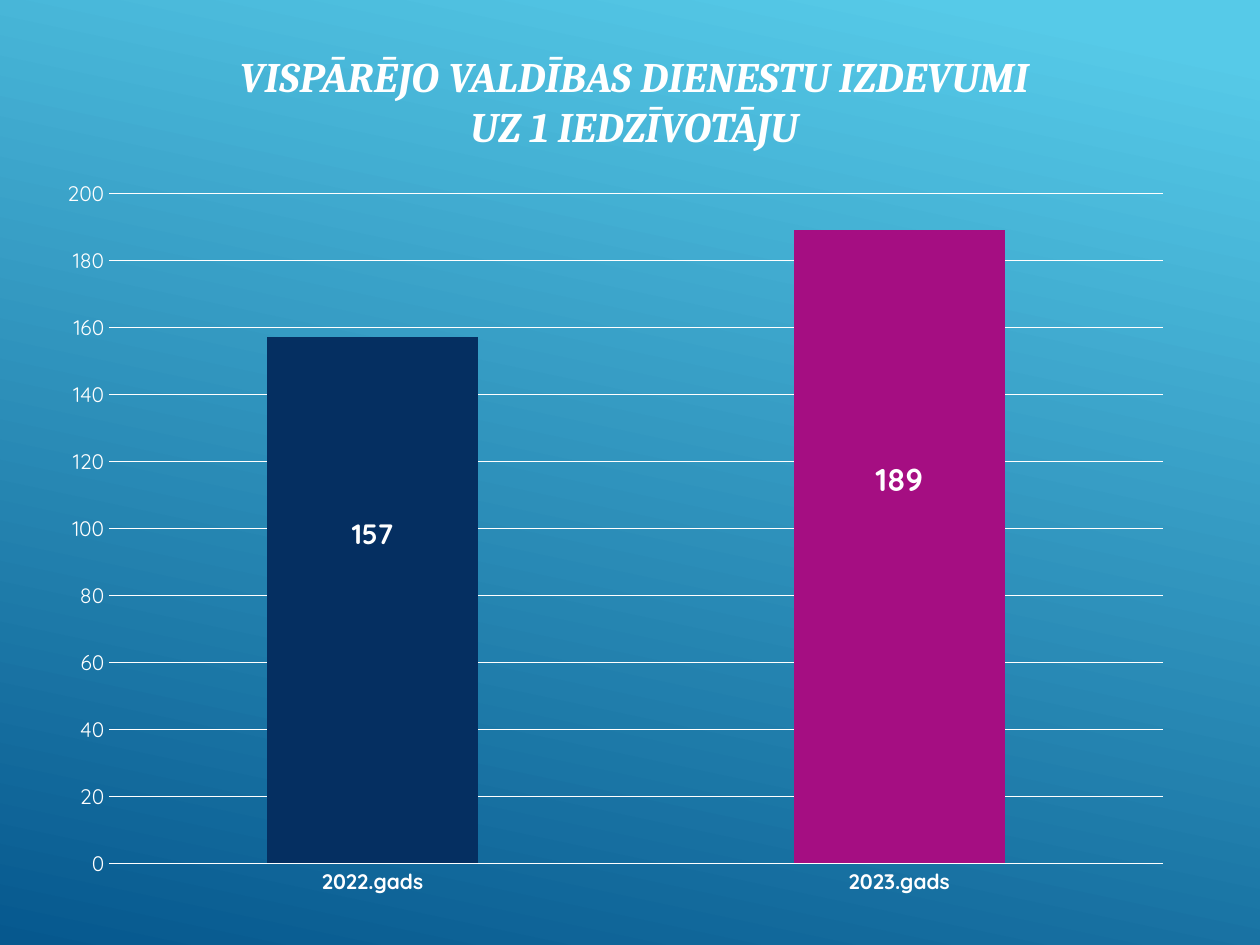
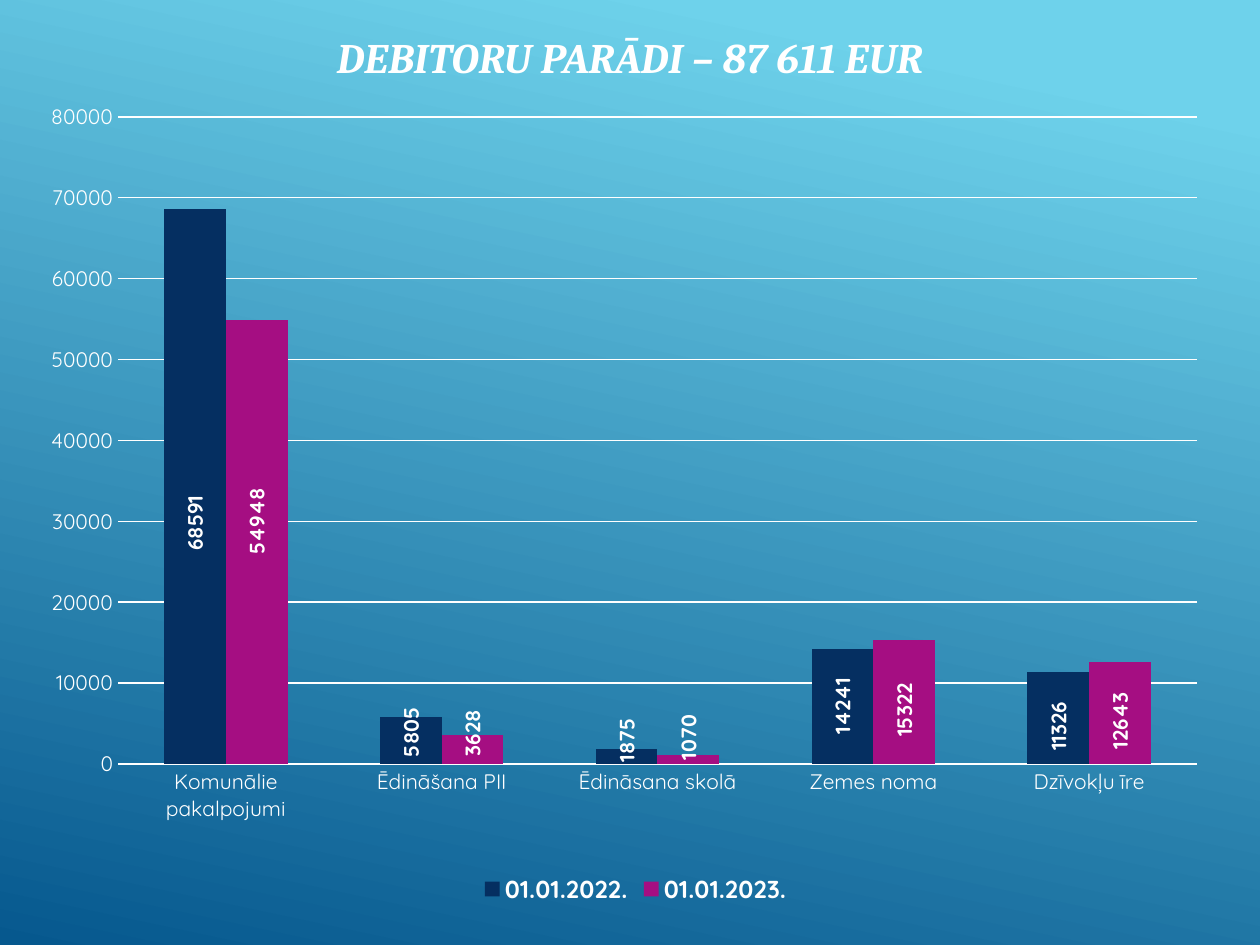
from pptx import Presentation
from pptx.chart.data import CategoryChartData
from pptx.dml.color import RGBColor
from pptx.enum.chart import (XL_CHART_TYPE as ChartType, XL_LABEL_POSITION as LabelPos,
                             XL_LEGEND_POSITION as LegendPos, XL_TICK_MARK as TickMark)
from pptx.enum.text import MSO_ANCHOR as Anchor, MSO_AUTO_SIZE as AutoSize, PP_ALIGN as Align
from pptx.oxml import parse_xml
from pptx.oxml.ns import nsdecls
from pptx.util import Cm, Pt

WHITE, NAVY, MAGENTA, DEEP_BLUE = "FFFFFF", "052F61", "A50E82", "06588E"
TITLE_FONT, CHART_FONT = "Cambria", "Quicksand"


def rgb(color):
    return RGBColor.from_string(color)


def manual_layout(**settings):
    """Chart layout element; settings must come in schema order."""
    items = "".join(f'<c:{key} val="{value}"/>' for key, value in settings.items())
    return parse_xml(f'<c:layout {nsdecls("c")}><c:manualLayout>{items}</c:manualLayout></c:layout>')


class Deck:
    def __init__(self):
        self.prs = Presentation()
        self.prs.slide_width, self.prs.slide_height = Cm(25.4), Cm(19.05)
        self.slide = None

    def style(self, font, size, bold=False, italic=False, name=CHART_FONT):
        font.name, font.size, font.bold, font.italic = name, Pt(size), bold, italic
        font.color.rgb = rgb(WHITE)

    def new_slide(self, light, light_end):
        self.slide = self.prs.slides.add_slide(self.prs.slide_layouts[5])
        fill = self.slide.background.fill
        fill.gradient()
        fill.gradient_angle = 258
        for stop, color, position in zip(fill.gradient_stops, (light, DEEP_BLUE), (light_end, 1)):
            stop.color.rgb, stop.position = rgb(color), position

    def title(self, text, left, top, width, height):
        title = self.slide.shapes.title
        title.left, title.top, title.width, title.height = map(Cm, (left, top, width, height))
        frame = title.text_frame
        frame.text = text
        frame.auto_size, frame.vertical_anchor = AutoSize.NONE, Anchor.MIDDLE
        paragraph = frame.paragraphs[0]
        paragraph.alignment = Align.CENTER
        for run in paragraph.runs:
            self.style(run.font, 24, True, True, TITLE_FONT)

    def columns(self, box, plot_box, categories, series, top_value, step, bold_categories=False):
        data = CategoryChartData()
        data.categories = categories
        for name, values in series.items():
            data.add_series(name, values)
        chart = self.slide.shapes.add_chart(
            ChartType.COLUMN_CLUSTERED, *map(Cm, box), data).chart
        chart.has_title = chart.has_legend = False
        self.style(chart.font, 10)

        # Axes and gridlines
        for axis, bold in ((chart.category_axis, bold_categories), (chart.value_axis, False)):
            axis.major_tick_mark = axis.minor_tick_mark = TickMark.NONE
            axis.format.line.fill.background()
            self.style(axis.tick_labels.font, 12, bold)
        scale = chart.value_axis
        scale.minimum_scale, scale.maximum_scale, scale.major_unit = 0, top_value, step
        grid = scale.major_gridlines.format.line
        grid.color.rgb, grid.width = rgb(WHITE), Pt(0.75)

        # Columns and plot area
        plot = chart.plots[0]
        plot.gap_width, plot.overlap, plot.vary_by_categories = 150, 0, False
        for columns, color in zip(plot.series, (NAVY, MAGENTA)):
            columns.format.fill.solid()
            columns.format.fill.fore_color.rgb = rgb(color)
            columns.invert_if_negative = False
        area = chart.element.xpath(".//c:plotArea")[0]
        for old in area.xpath("./c:layout"):
            area.remove(old)
        area.insert(0, manual_layout(layoutTarget="inner", xMode="edge", yMode="edge",
                                     **dict(zip("xywh", plot_box))))
        return chart

    def value_labels(self, chart, sizes, shifts, upright=False):
        """Centre each value in its column, then shift it by a share of the chart height."""
        for columns, row in zip(chart.plots[0].series, shifts):
            columns.data_labels.show_value = True
            self.style(columns.data_labels.font, sizes[0], True)
            for index in range(len(row)):
                label = columns.points[index].data_label
                label.position = LabelPos.CENTER
                self.style(label.font, sizes[index % len(sizes)], True)
        all_shifts = [shift for row in shifts for shift in row]
        for label, shift in zip(chart.element.xpath(".//c:dLbl"), all_shifts):
            label.xpath("./c:idx")[0].addnext(manual_layout(x=0, y=shift))
        # Shifted labels stand without leader lines
        for leader in chart.element.xpath(".//c:showLeaderLines"):
            leader.set("val", "0")
        if upright:
            for body in chart.element.xpath(".//c:dLbls//a:bodyPr"):
                body.set("rot", "-5400000")
                body.set("vert", "horz")

    def legend(self, chart):
        chart.has_legend = True
        chart.legend.position = LegendPos.BOTTOM
        chart.legend.include_in_layout = False
        self.style(chart.legend.font, 14, True)


def main():
    deck = Deck()

    # Spending per resident
    deck.new_slide("56CAE8", 0.05)
    deck.title("VISPĀRĒJO VALDĪBAS DIENESTU IZDEVUMI\vUZ 1 IEDZĪVOTĀJU", 1.09, 0.53, 23.39, 3)
    spending = deck.columns((0.89, 3.33, 23.01, 15.01), (0.057, 0.038, 0.923, 0.9),
                            ["2022.gads", "2023.gads"], {"Series 1": [157, 189]},
                            200, 20, bold_categories=True)
    latest = spending.plots[0].series[0].points[1].format.fill
    latest.solid()
    latest.fore_color.rgb = rgb(MAGENTA)
    deck.value_labels(spending, (16, 18), [[-0.09, -0.09]])

    # Debts by service
    deck.new_slide("6ED2EB", 0.1)
    deck.title("DEBITORU PARĀDI – 87 611 EUR", 1.7, 0.03, 22, 2.21)
    debts = deck.columns(
        (0.51, 1.93, 24.61, 16.41), (0.076, 0.026, 0.884, 0.795),
        ["Komunālie pakalpojumi", "Ēdināšana PII", "Ēdināsana skolā", "Zemes noma", "Dzīvokļu īre"],
        {"01.01.2022.": [68591, 5805, 1875, 14241, 11326],
         "01.01.2023.": [54948, 3628, 1070, 15322, 12643]},
        80000, 10000)
    deck.value_labels(debts, (12,), [[0.045, -0.01, -0.02, 0, 0.01],
                                     [-0.025, -0.02, -0.027, 0.01, 0.01]], upright=True)
    deck.legend(debts)

    deck.prs.save("out.pptx")


if __name__ == "__main__":
    main()
